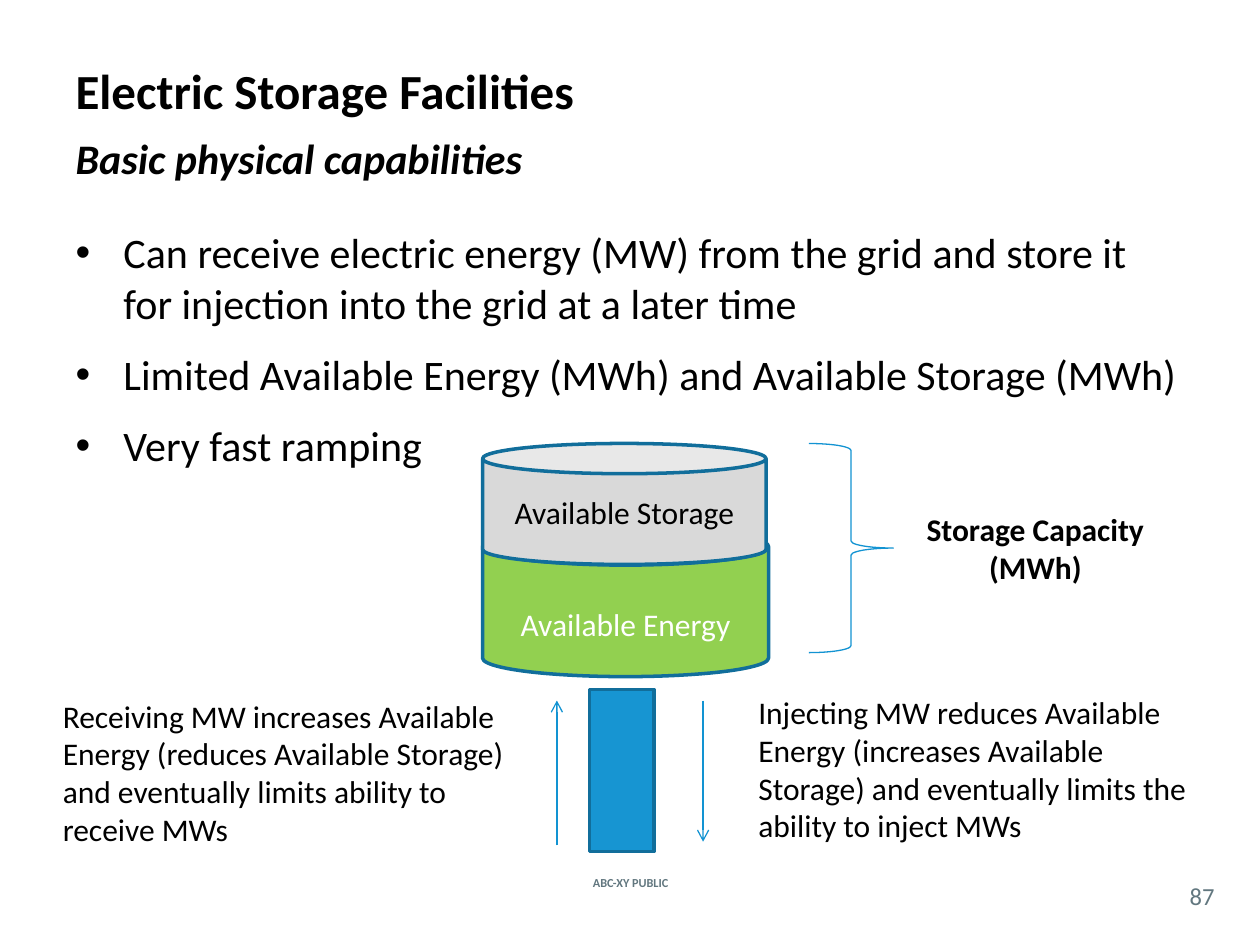
from dataclasses import dataclass
from typing import Optional

from lxml.etree import SubElement
from pptx import Presentation
from pptx.dml.color import RGBColor
from pptx.enum.shapes import MSO_CONNECTOR, MSO_SHAPE as Shape
from pptx.enum.text import MSO_ANCHOR as Anchor, MSO_AUTO_SIZE as AutoSize, PP_ALIGN as Align
from pptx.oxml.ns import qn
from pptx.util import Inches, Pt

FONT = "Calibri"
BLACK, WHITE, SLATE = "000000", "FFFFFF", "62777F"
BLUE, EDGE, SKY = "1795D2", "116E9B", "1293D2"
GREEN, GREY = "92D050", "D9D9D9"


@dataclass
class Box:
    left: float
    top: float
    width: float
    height: float

    def lengths(self) -> list:
        return [Inches(v) for v in (self.left, self.top, self.width, self.height)]


@dataclass
class Style:
    size: float = 18
    color: str = BLACK
    bold: bool = False
    italic: bool = False
    align: Align = Align.LEFT


@dataclass
class Part:
    kind: Shape
    box: Box
    fill: Optional[str] = None
    line: str = EDGE
    weight: float = 2
    rotation: float = 0
    label: str = ""
    label_color: str = BLACK
    inset_top: float = 0.05


def rgb(value: str) -> RGBColor:
    return RGBColor.from_string(value)


def write(frame, lines: list[str], style: Style, anchor=Anchor.TOP,
          gap: float = 0, bullet: str = "") -> None:
    frame.word_wrap = True
    frame.vertical_anchor = anchor
    for i, line in enumerate(lines):
        para = frame.paragraphs[0] if i == 0 else frame.add_paragraph()
        props = para._p.get_or_add_pPr()
        indent = Inches(0.38) if bullet else 0
        props.set("marL", str(indent))
        props.set("indent", str(-indent))
        if bullet:
            SubElement(props, qn("a:buFont"), typeface="Arial")
            SubElement(props, qn("a:buChar"), char=bullet)
        else:
            SubElement(props, qn("a:buNone"))
        para.alignment = style.align
        para.space_before = Pt(gap if i else 0)
        run = para.add_run()
        run.text = line
        font = run.font
        font.name, font.size = FONT, Pt(style.size)
        font.bold, font.italic = style.bold, style.italic
        font.color.rgb = rgb(style.color)


def fill_placeholder(holder, box: Box, lines: list[str], style: Style, **layout) -> None:
    holder.left, holder.top, holder.width, holder.height = box.lengths()
    holder.text_frame.auto_size = AutoSize.NONE
    write(holder.text_frame, lines, style, **layout)


def add_text(slide, box: Box, lines: list[str], style: Style, anchor=Anchor.TOP):
    frame = slide.shapes.add_textbox(*box.lengths()).text_frame
    write(frame, lines, style, anchor)
    return frame


def add_part(slide, part: Part) -> None:
    shape = slide.shapes.add_shape(part.kind, *part.box.lengths())
    shape.shadow.inherit = False
    shape.rotation = part.rotation
    if part.fill:
        shape.fill.solid()
        shape.fill.fore_color.rgb = rgb(part.fill)
    else:
        shape.fill.background()
    shape.line.color.rgb = rgb(part.line)
    shape.line.width = Pt(part.weight)
    if part.label:
        shape.text_frame.margin_top = Inches(part.inset_top)
        write(shape.text_frame, [part.label],
              Style(color=part.label_color, align=Align.CENTER), Anchor.MIDDLE)


def add_flow(slide, x: float, start: float, end: float) -> None:
    arrow = slide.shapes.add_connector(
        MSO_CONNECTOR.STRAIGHT, Inches(x), Inches(start), Inches(x), Inches(end))
    arrow.line.color.rgb = rgb(SKY)
    arrow.line.width = Pt(0.75)
    SubElement(arrow.line._get_or_add_ln(), qn("a:tailEnd"), type="arrow")
    SubElement(arrow._element.spPr, qn("a:effectLst"))


def main() -> None:
    deck = Presentation()
    deck.slide_width, deck.slide_height = Inches(10), Inches(7.5)
    slide = deck.slides.add_slide(deck.slide_layouts[3])
    title, subtitle, capabilities = list(slide.placeholders)[:3]

    # Heading and list
    fill_placeholder(title, Box(0.5, 0.42, 9, 0.58), ["Electric Storage Facilities"],
                     Style(28, bold=True), anchor=Anchor.MIDDLE)
    fill_placeholder(subtitle, Box(0.5, 1, 9, 0.5), ["Basic physical capabilities"],
                     Style(24, bold=True, italic=True))
    fill_placeholder(capabilities, Box(0.5, 1.75, 9, 5.08), [
        "Can receive electric energy (MW) from the grid and store it "
        "for injection into the grid at a later time",
        "Limited Available Energy (MWh) and Available Storage (MWh)",
        "Very fast ramping",
    ], Style(24), gap=12, bullet="•")

    # Notes on either side of the tank
    for box, note in (
        (Box(0.4, 5.48, 4, 1.31),
         "Receiving MW increases Available Energy (reduces Available Storage) "
         "and eventually limits ability to receive MWs"),
        (Box(5.92, 5.45, 3.75, 1.31),
         "Injecting MW reduces Available Energy (increases Available Storage) "
         "and eventually limits the ability to inject MWs"),
    ):
        add_text(slide, box, [note], Style()).auto_size = AutoSize.SHAPE_TO_FIT_TEXT

    capacity = add_text(slide, Box(7.24, 4, 2.01, 0.71), ["Storage Capacity ", "(MWh) "],
                        Style(bold=True, align=Align.CENTER))
    capacity.word_wrap = False
    capacity.auto_size = AutoSize.SHAPE_TO_FIT_TEXT

    # Capacity brace, tank and the pipe below it
    for part in (
        Part(Shape.RIGHT_BRACE, Box(6.42, 3.52, 0.67, 1.66), line=SKY, weight=0.75),
        Part(Shape.CAN, Box(3.83, 4.19, 2.27, 1.18), GREEN, label="Available Energy",
             label_color=WHITE, inset_top=0.24),
        Part(Shape.CAN, Box(3.83, 3.52, 2.25, 0.96), GREY, label="Available Storage"),
        Part(Shape.MATH_MINUS, Box(4.06, 5.03, 1.75, 2.17), BLUE, rotation=270),
    ):
        add_part(slide, part)

    # Flow out of and into the tank
    add_flow(slide, 5.58, 5.56, 6.68)
    add_flow(slide, 4.42, 6.71, 5.56)

    # Footer and page number
    add_text(slide, Box(4.27, 6.92, 1.47, 0.17), ["ABC-XY PUBLIC"],
             Style(7, SLATE, bold=True, align=Align.CENTER), Anchor.MIDDLE)
    page = add_text(slide, Box(9.33, 6.96, 0.42, 0.29), ["87"],
                    Style(14, SLATE, align=Align.CENTER), Anchor.MIDDLE)
    page.margin_left = page.margin_right = page.margin_top = page.margin_bottom = 0

    deck.save("out.pptx")


if __name__ == "__main__":
    main()
